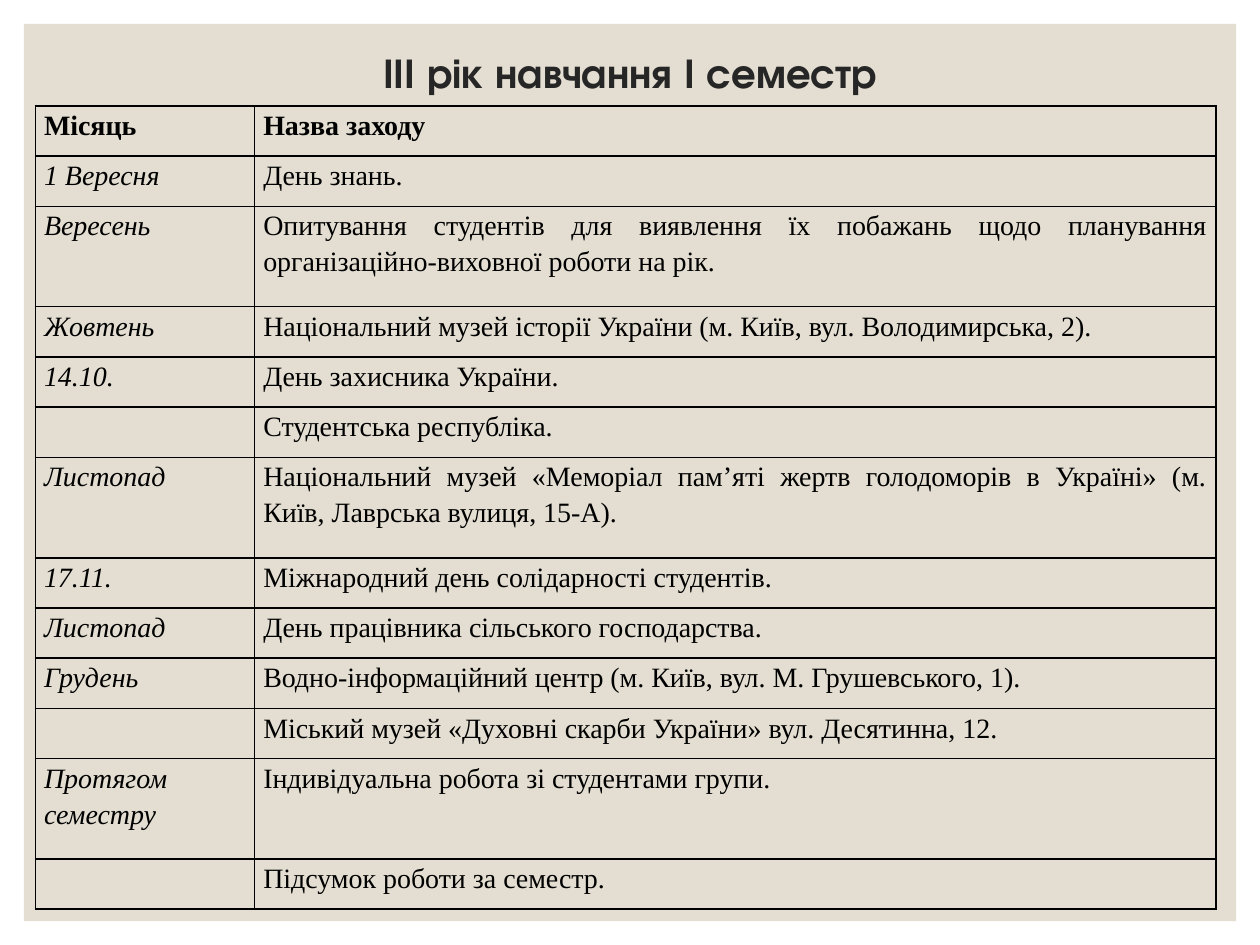
from typing import NamedTuple

from lxml.etree import SubElement
from pptx import Presentation
from pptx.dml.color import RGBColor
from pptx.enum.shapes import MSO_SHAPE as Shape
from pptx.enum.text import MSO_ANCHOR as Anchor, PP_ALIGN as Align
from pptx.oxml.ns import qn
from pptx.util import Inches, Pt


class Event(NamedTuple):
    month: str
    name: str
    units: int = 1


EVENTS = [
    Event("Місяць", "Назва заходу"),
    Event("1 Вересня", "День знань."),
    Event("Вересень", "Опитування студентів для виявлення їх побажань щодо планування "
          "організаційно-виховної роботи на рік.", 2),
    Event("Жовтень", "Національний музей історії України (м. Київ, вул. Володимирська, 2)."),
    Event("14.10.", "День захисника України."),
    Event("", "Студентська республіка."),
    Event("Листопад", "Національний музей «Меморіал пам’яті жертв голодоморів в Україні» "
          "(м. Київ, Лаврська вулиця, 15-А).", 2),
    Event("17.11.", "Міжнародний день солідарності студентів."),
    Event("Листопад", "День працівника сільського господарства."),
    Event("Грудень", "Водно-інформаційний центр (м. Київ, вул. М. Грушевського, 1)."),
    Event("", "Міський музей «Духовні скарби України» вул. Десятинна, 12."),
    Event("Протягом семестру", "Індивідуальна робота зі студентами групи.", 2),
    Event("", "Підсумок роботи за семестр."),
]
COLUMNS = (1.74, 7.63)
TABLE_HEIGHT = 6.38
TITLE_FONT = {"name": "TeX Gyre Adventor", "size": Pt(24), "bold": True}
CELL_FONT = {"name": "Times New Roman", "size": Pt(16)}
CELL_FORMAT = {"margin_left": Inches(0.07), "margin_right": Inches(0.07),
               "margin_top": 0, "margin_bottom": 0, "vertical_anchor": Anchor.TOP}


def rgb(value: str) -> RGBColor:
    """Turn a hex string into a colour."""
    return RGBColor.from_string(value)


def set_attrs(target, values: dict) -> None:
    """Set every attribute in a dict of format values."""
    for name, value in values.items():
        setattr(target, name, value)


def write(p, text: str, font: dict, color: str, **values) -> None:
    """Add one formatted run to a paragraph."""
    set_attrs(p, values)
    r = p.add_run()
    r.text = text
    set_attrs(r.font, font)
    r.font.color.rgb = rgb(color)


def add_borders(cell, color: str, width: float) -> None:
    """Draw a solid line on all four sides of a cell."""
    tc_pr = cell._tc.get_or_add_tcPr()
    for side in ("lnL", "lnR", "lnT", "lnB"):
        ln = SubElement(tc_pr, qn(f"a:{side}"), w=str(Pt(width)))
        SubElement(SubElement(ln, qn("a:solidFill")), qn("a:srgbClr"), val=color)


def add_panel(s) -> None:
    """Put the beige panel behind everything else."""
    sp = s.shapes.add_shape(Shape.RECTANGLE, *map(Inches, (0.19, 0.19, 9.62, 7.12)))
    sp.shadow.inherit = False
    sp.fill.solid()
    sp.fill.fore_color.rgb = rgb("E3DED1")
    sp.line.fill.background()
    s.shapes._spTree.insert(2, sp._element)


def add_title(s, text: str) -> None:
    """Place and fill the title placeholder."""
    sp = s.shapes.title
    set_attrs(sp, {"left": Inches(0.8), "top": Inches(0.36),
                   "width": Inches(8.4), "height": Inches(0.47)})
    tf = sp.text_frame
    set_attrs(tf, {"word_wrap": True, "vertical_anchor": Anchor.MIDDLE})
    write(tf.paragraphs[0], text, TITLE_FONT, "262626",
          alignment=Align.CENTER, line_spacing=0.9)


def add_events(s, events: list[Event]) -> None:
    """Build the table of events with one or two height units a row."""
    frame = s.shapes.add_table(len(events), len(COLUMNS), Inches(0.28), Inches(0.84),
                               Inches(sum(COLUMNS)), Inches(TABLE_HEIGHT))
    table = frame.table
    set_attrs(table, {"first_row": False, "horz_banding": False})
    for column, width in zip(table.columns, COLUMNS):
        column.width = Inches(width)
    unit = TABLE_HEIGHT / sum(event.units for event in events)
    for i, event in enumerate(events):
        table.rows[i].height = Inches(unit * event.units)
        for j, text in enumerate((event.month, event.name)):
            cell = table.cell(i, j)
            set_attrs(cell, CELL_FORMAT)
            add_borders(cell, "000000", 1)
            cell.fill.background()
            if text:
                font = CELL_FONT | {"bold": i == 0, "italic": i > 0 and j == 0}
                write(cell.text_frame.paragraphs[0], text, font, "000000",
                      alignment=Align.JUSTIFY, line_spacing=1.15)


def main() -> None:
    """Build and save the slide."""
    prs = Presentation()
    set_attrs(prs, {"slide_width": Inches(10), "slide_height": Inches(7.5)})
    s = prs.slides.add_slide(prs.slide_layouts[5])
    add_panel(s)
    add_title(s, "ІІІ рік навчання І семестр")
    add_events(s, EVENTS)
    prs.save("out.pptx")


if __name__ == "__main__":
    main()
